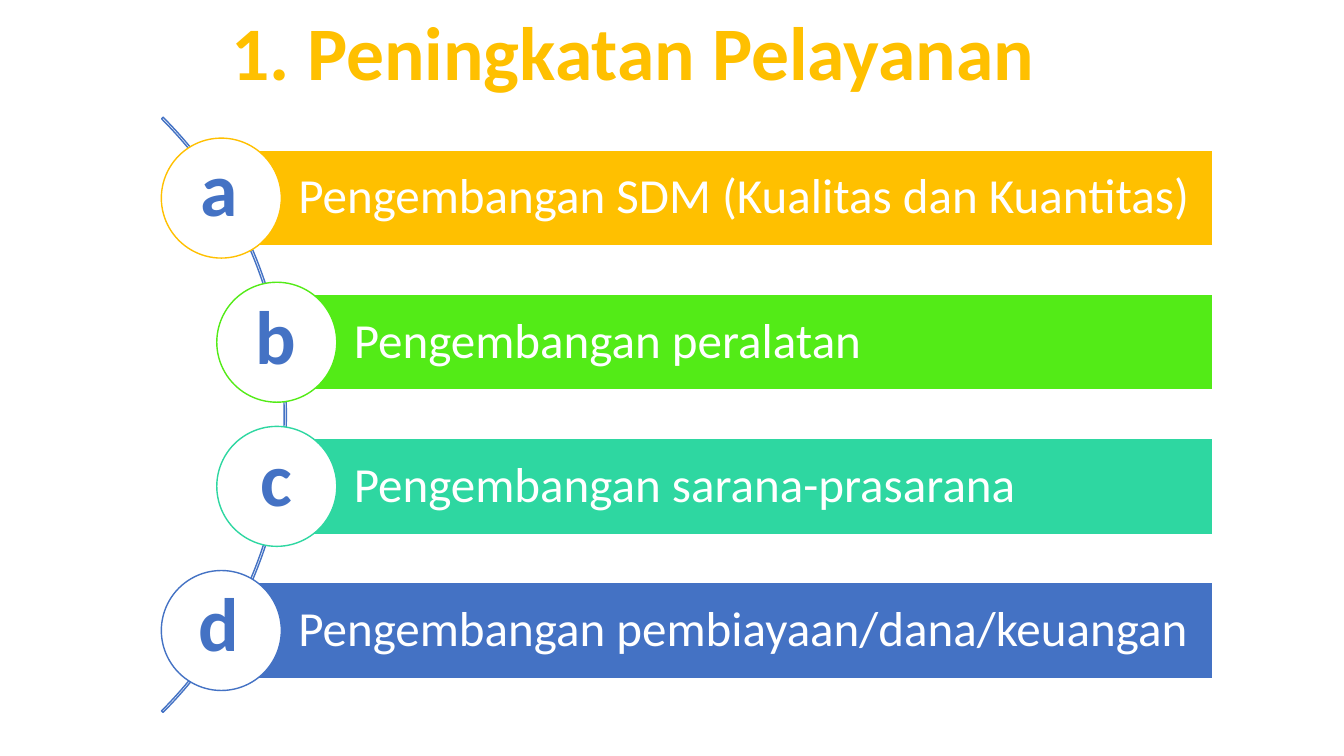
from lxml import etree
from pptx import Presentation
from pptx.dml.color import RGBColor
from pptx.enum.shapes import MSO_SHAPE
from pptx.enum.text import MSO_ANCHOR, MSO_AUTO_SIZE, PP_ALIGN
from pptx.oxml import parse_xml
from pptx.util import Pt

RECTANGLE, OVAL, BLOCK_ARC = MSO_SHAPE.RECTANGLE, MSO_SHAPE.OVAL, MSO_SHAPE.BLOCK_ARC
LEFT, CENTER = PP_ALIGN.LEFT, PP_ALIGN.CENTER
MIDDLE = MSO_ANCHOR.MIDDLE
FIT_SHAPE = MSO_AUTO_SIZE.SHAPE_TO_FIT_TEXT
DRAWING = "http://schemas.openxmlformats.org/drawingml/2006/main"

PX = 9144  # 100 px to the inch
THEME = {
    "font": "Calibri", "heading": 54, "label": 35,
    "white": "FFFFFF", "gold": "FFC000", "green": "53EB17",
    "teal": "2ED7A1", "blue": "4472C4",
}


def add_outlined(preset, box, line, fill=None):
    shape = page.shapes.add_shape(preset, *[length * PX for length in box])
    shape.shadow.inherit = False
    if fill:
        shape.fill.solid()
        shape.fill.fore_color.rgb = RGBColor.from_string(THEME[fill])
    else:
        shape.fill.background()
    shape.line.color.rgb = RGBColor.from_string(THEME[line])
    shape.line.width = Pt(1)
    return shape


def write(shape, text, size, color, align=CENTER, bold=False, spacing=None):
    para = shape.text_frame.paragraphs[0]
    para.alignment = align
    para.line_spacing = spacing
    span = para.add_run()
    span.text = text
    span.font.name = THEME["font"]
    span.font.size = Pt(THEME[size])
    span.font.bold = bold
    span.font.color.rgb = RGBColor.from_string(THEME[color])
    return span


deck = Presentation()
deck.slide_width, deck.slide_height = 1333 * PX, 750 * PX
page = deck.slides.add_slide(deck.slide_layouts[6])

title = page.shapes.add_textbox(216 * PX, 0, 824 * PX, 101 * PX)
title.text_frame.word_wrap = False
title.text_frame.auto_size = FIT_SHAPE
write(title, "1. Peningkatan Pelayanan", "heading", "gold", bold=True)

arc = add_outlined(BLOCK_ARC, (-551, -6, 835, 835), "blue")
arc.adjustments[0], arc.adjustments[1], arc.adjustments[2] = 189, 27, 0.0026

# letter, text, colour, circle centre x, letter centre x, letter top
ROWS = [
    ("a", "Pengembangan SDM (Kualitas dan Kuantitas)", "gold", 220, 217, 135),
    ("b", "Pengembangan peralatan", "green", 275, 274, 282),
    ("c", "Pengembangan sarana-prasarana", "teal", 275, 274, 423),
    ("d", "Pengembangan pembiayaan/dana/keuangan", "blue", 220, 217, 566),
]
FIRST_BAR, ROW_STEP, BAR_RIGHT, BAR_HEIGHT = 149, 143, 1203, 95
CIRCLE, LETTER_WIDTH, LETTER_HEIGHT = 119, 60, 101

for row, (_, text, color, center, _, _) in enumerate(ROWS):
    top = FIRST_BAR + row * ROW_STEP
    bar = add_outlined(RECTANGLE, (center, top, BAR_RIGHT - center, BAR_HEIGHT), "white", color)
    frame = bar.text_frame
    frame.word_wrap = True
    frame.vertical_anchor = MIDDLE
    frame.margin_left = 76 * PX
    frame.margin_top = frame.margin_right = frame.margin_bottom = 10 * PX
    write(bar, text, "label", "white", align=LEFT, spacing=0.9)
    circle_top = top - (CIRCLE - BAR_HEIGHT) // 2
    add_outlined(OVAL, (center - CIRCLE // 2 - 1, circle_top, CIRCLE, CIRCLE), color, "white")

for letter, _, _, _, center, top in ROWS:
    box = page.shapes.add_textbox((center - LETTER_WIDTH // 2) * PX, top * PX,
                                  LETTER_WIDTH * PX, LETTER_HEIGHT * PX)
    box.text_frame.word_wrap = False
    box.text_frame.auto_size = FIT_SHAPE
    span = write(box, letter, "heading", "blue", bold=True)
    outline = parse_xml(f'<a:ln xmlns:a="{DRAWING}" w="{Pt(0.75)}"/>')
    paint = etree.SubElement(outline, f"{{{DRAWING}}}solidFill")
    etree.SubElement(paint, f"{{{DRAWING}}}srgbClr", val=THEME["white"])
    span.font._element.insert(0, outline)

deck.save("out.pptx")
